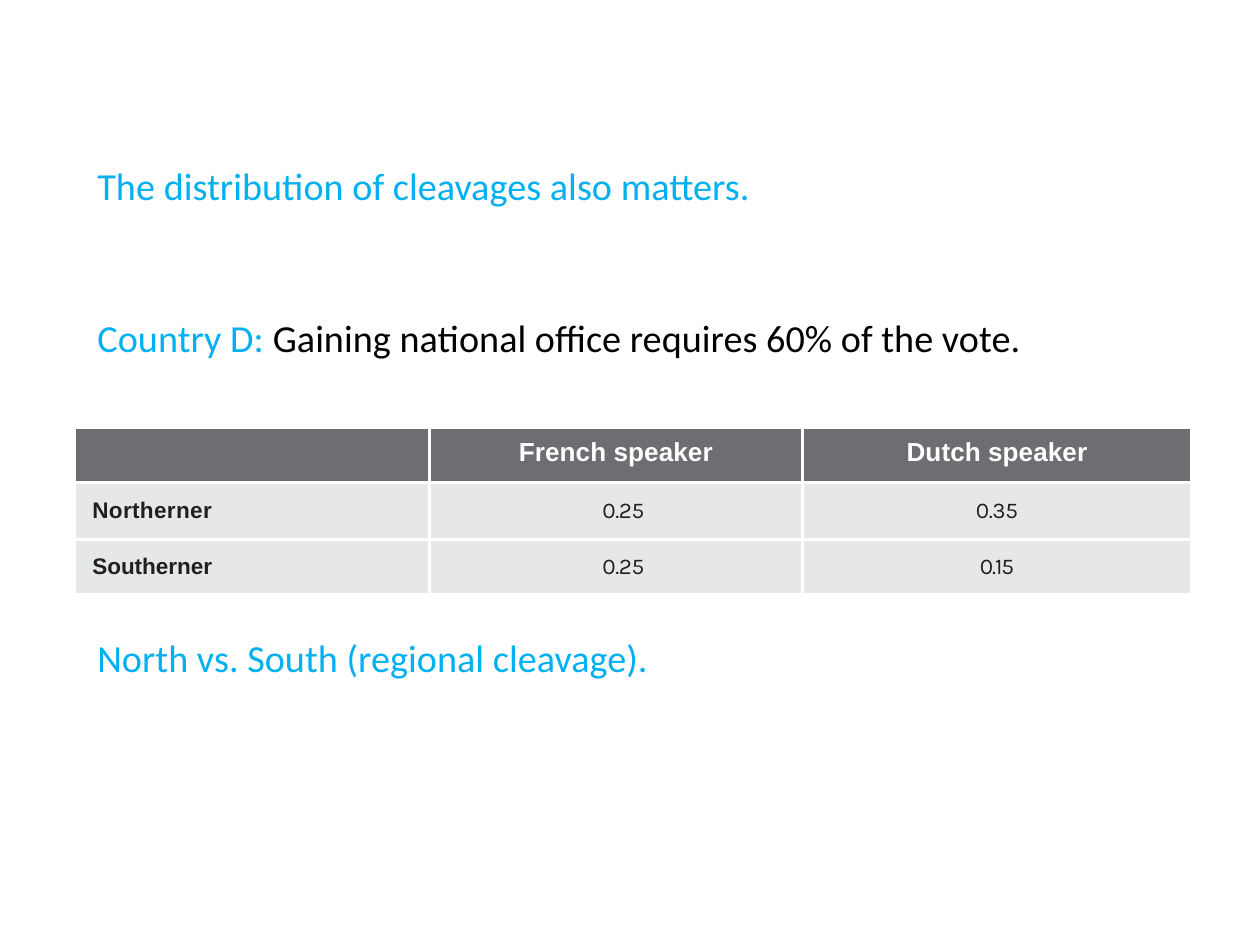
from lxml import etree
from pptx import Presentation
from pptx.dml.color import RGBColor
from pptx.enum.text import PP_ALIGN
from pptx.oxml.ns import qn
from pptx.util import Inches, Pt

CENTER, LEFT = PP_ALIGN.CENTER, PP_ALIGN.LEFT

SKY = RGBColor(0x00, 0xB0, 0xF0)
BLACK = RGBColor(0x00, 0x00, 0x00)
WHITE = RGBColor(0xFF, 0xFF, 0xFF)
INK = RGBColor(0x23, 0x1F, 0x20)
HEADER_GREY = RGBColor(0x6D, 0x6E, 0x71)
BODY_GREY = RGBColor(0xE6, 0xE7, 0xE8)

POINTS_PER_INCH = 72
COLUMN_WIDTHS = [1.42, 1.49, 1.56]
ROW_HEIGHTS = [0.22, 0.23, 0.22]
ROW_PADDINGS = [2.9, 4.5, 4]
VOTE_SHARES = [
    ["", "French speaker", "Dutch speaker"],
    ["Northerner", "0.25", "0.35"],
    ["Southerner", "0.25", "0.15"],
]


def add_run(paragraph, text, font_name, size, color, bold=False, spacing=0):
    """Append a run; spacing is the letter spacing in points."""
    run = paragraph.add_run()
    run.text = text
    run.font.name = font_name
    run.font.size = Pt(size)
    run.font.color.rgb = color
    run.font.bold = bold
    if spacing:
        run.font._element.set("spc", str(round(spacing * 100)))


def add_statements(slide, left, top, width, height, statements):
    """Place paragraphs, each given as (space before, [(text, colour), ...])."""
    frame = slide.shapes.add_textbox(
        Inches(left), Inches(top), Inches(width), Inches(height)).text_frame
    frame.word_wrap = True
    frame.margin_left = frame.margin_top = Inches(0.01)
    frame.margin_right = frame.margin_bottom = 0
    for index, (space_before, pieces) in enumerate(statements):
        paragraph = frame.add_paragraph() if index else frame.paragraphs[0]
        paragraph.space_before = Pt(space_before)
        for text, color in pieces:
            add_run(paragraph, text, "Calibri", 11, color)


def add_white_borders(cell):
    properties = cell._tc.get_or_add_tcPr()
    for position, side in enumerate(("a:lnL", "a:lnR", "a:lnT", "a:lnB")):
        line = etree.Element(qn(side), w=str(Pt(1)))
        fill = etree.SubElement(line, qn("a:solidFill"))
        etree.SubElement(fill, qn("a:srgbClr"), val=str(WHITE))
        properties.insert(position, line)


def fill_cell(cell, text, row, column):
    is_header = row == 0
    cell.fill.solid()
    cell.fill.fore_color.rgb = HEADER_GREY if is_header else BODY_GREY
    add_white_borders(cell)
    cell.margin_left = cell.margin_right = cell.margin_bottom = 0
    cell.margin_top = Pt(ROW_PADDINGS[row])
    if not is_header and column < 2:
        cell.margin_left = Inches(0.06 if column else 0.07)

    paragraph = cell.text_frame.paragraphs[0]
    paragraph.alignment = CENTER if is_header or column else LEFT
    if not text:
        etree.SubElement(paragraph._p, qn("a:endParaRPr"), sz="750")
    elif is_header:
        add_run(paragraph, text, "Arial", 7.5, WHITE, True)
    elif column == 0:
        add_run(paragraph, text, "Arial", 6.5, INK, True, 0.1 if row == 1 else 0)
    else:
        add_run(paragraph, text, "Karla", 6.5, INK, False,
                -0.3 if text == "0.15" else -0.1)


def add_vote_table(slide, left, top):
    table = slide.shapes.add_table(
        len(ROW_HEIGHTS), len(COLUMN_WIDTHS), Inches(left), Inches(top),
        Inches(sum(COLUMN_WIDTHS)), Inches(sum(ROW_HEIGHTS))).table
    for column, width in zip(table.columns, COLUMN_WIDTHS):
        column.width = Inches(width)
    for row, height in zip(table.rows, ROW_HEIGHTS):
        row.height = Inches(height)
    for row, texts in enumerate(VOTE_SHARES):
        for column, text in enumerate(texts):
            fill_cell(table.cell(row, column), text, row, column)


def main():
    presentation = Presentation()
    presentation.slide_width = Inches(363 / POINTS_PER_INCH)
    presentation.slide_height = Inches(272.5 / POINTS_PER_INCH)
    slide = presentation.slides.add_slide(presentation.slide_layouts[6])

    add_statements(slide, 0.38, 0.64, 3.85, 0.8, [
        (0.9, [("The distribution of cleavages also matters.", SKY)]),
        (30.6, [("Country D: ", SKY),
                ("Gaining national office requires 60% of the vote.", BLACK)]),
    ])
    add_vote_table(slide, 0.3, 1.71)
    add_statements(slide, 0.38, 2.53, 2.34, 0.2, [
        (0.9, [("North vs. South (regional cleavage).", SKY)]),
    ])
    presentation.save("out.pptx")


if __name__ == "__main__":
    main()
